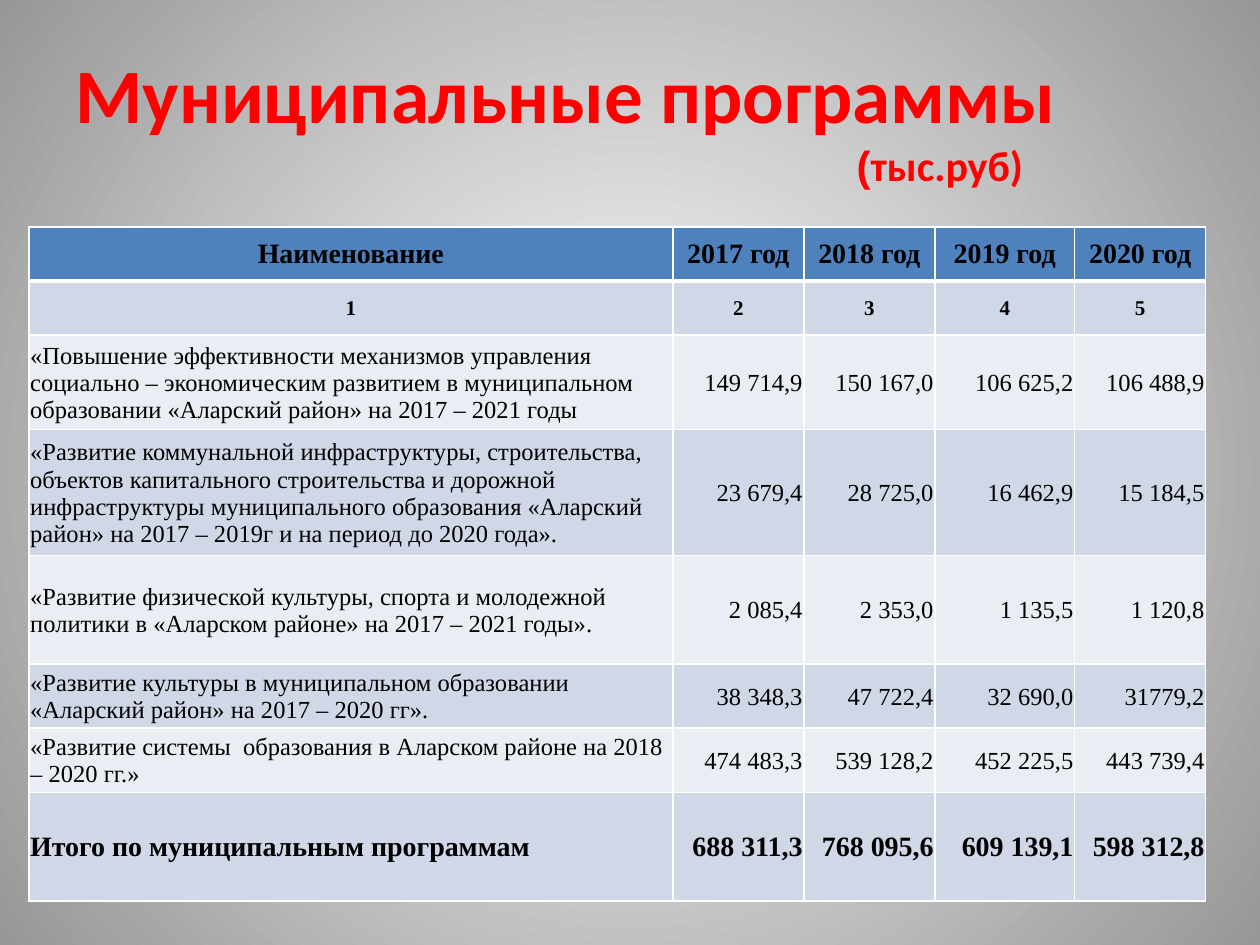
"""Build a slide with a table of municipal programme spending by year."""
from dataclasses import dataclass

from lxml import etree
from pptx import Presentation
from pptx import util as u
from pptx.dml.color import RGBColor
from pptx.enum import text
from pptx.oxml import parse_xml
from pptx.oxml.ns import nsdecls, qn
from pptx.slide import Slide
from pptx.table import _Cell as Cell

WIDTH, HEIGHT = u.Inches(10), u.Inches(7.5)
COLUMNS = (5.11, 1.04, 1.04, 1.11, 1.04)
LEFT, CENTER, RIGHT = text.PP_ALIGN.LEFT, text.PP_ALIGN.CENTER, text.PP_ALIGN.RIGHT


@dataclass(frozen=True)
class Theme:
    title_font: str = "Calibri"
    bracket_font: str = "Arial"
    table_font: str = "Times New Roman"
    title: str = "FF0000"
    ink: str = "000000"
    border: str = "FFFFFF"
    header: str = "4F81BD"
    bands: tuple[str, str] = ("D0D8E8", "E9EDF4")
    backdrop: tuple[str, str] = ("FFFFFF", "979797")
    title_size: int = 44
    unit_size: int = 24
    strong_size: int = 16
    body_size: int = 14
    number_size: int = 12


@dataclass(frozen=True)
class Row:
    height: float
    values: tuple[str, ...]
    size: int
    bold: bool = False
    centered: bool = False


THEME = Theme()
ROWS = (
    Row(0.43, ("Наименование", "2017 год", "2018 год", "2019 год", "2020 год"),
        THEME.strong_size, bold=True, centered=True),
    Row(0.43, ("1", "2", "3", "4", "5"), THEME.number_size, bold=True, centered=True),
    Row(0.75, ("«Повышение эффективности механизмов управления социально – экономическим "
               "развитием в муниципальном образовании «Аларский район» на 2017 – 2021 годы",
               "149 714,9", "150 167,0", "106 625,2", "106 488,9"), THEME.body_size),
    Row(1, ("«Развитие коммунальной инфраструктуры, строительства, объектов капитального "
            "строительства и дорожной инфраструктуры муниципального образования "
            "«Аларский район» на 2017 – 2019г и на период до 2020 года».",
            "23 679,4", "28 725,0", "16 462,9", "15 184,5"), THEME.body_size),
    Row(0.86, ("«Развитие физической культуры, спорта и молодежной политики "
               "в «Аларском районе» на 2017 – 2021 годы».",
               "2 085,4", "2 353,0", "1 135,5", "1 120,8"), THEME.body_size),
    Row(0.51, ("«Развитие культуры в муниципальном образовании «Аларский район» "
               "на 2017 – 2020 гг».",
               "38 348,3", "47 722,4", "32 690,0", "31779,2"), THEME.body_size),
    Row(0.51, ("«Развитие системы  образования в Аларском районе на 2018 – 2020 гг.»",
               "474 483,3", "539 128,2", "452 225,5", "443 739,4"), THEME.body_size),
    Row(0.86, ("Итого по муниципальным программам",
               "688 311,3", "768 095,6", "609 139,1", "598 312,8"),
        THEME.strong_size, bold=True),
)


def style_font(font, name: str, size: int, color: str, bold: bool) -> None:
    """Set the face, size, colour and weight of a font."""
    font.name, font.size, font.bold = name, u.Pt(size), bold
    font.color.rgb = RGBColor.from_string(color)


def paint_background(slide: Slide) -> None:
    """Fill the background with a circular gradient."""
    fill = slide.background.fill
    fill.gradient()
    for stop, color in zip(fill.gradient_stops, THEME.backdrop):
        stop.color.rgb = RGBColor.from_string(color)
    gradient = slide.element.find(".//" + qn("a:gradFill"))
    gradient.remove(gradient.find(qn("a:lin")))
    circle = etree.SubElement(gradient, qn("a:path"), {"path": "circle"})
    etree.SubElement(circle, qn("a:fillToRect"), dict.fromkeys("ltrb", "50000"))


def add_title(slide: Slide) -> None:
    """Add the heading with its unit line below."""
    box = slide.shapes.add_textbox(
        int(WIDTH * 0.05), int(HEIGHT * 0.04), int(WIDTH * 0.9), int(HEIGHT * 0.17))
    frame = box.text_frame
    frame.word_wrap = True
    frame.vertical_anchor = text.MSO_ANCHOR.MIDDLE
    heading, unit = frame.paragraphs[0], frame.add_paragraph()
    heading.text = "Муниципальные программы"
    style_font(heading.font, THEME.title_font, THEME.title_size, THEME.title, True)
    unit.alignment = LEFT
    unit._p.get_or_add_pPr().set("marL", str(int(WIDTH * 0.62)))
    for words, face in (("(", THEME.bracket_font), ("тыс.руб)", THEME.title_font)):
        run = unit.add_run()
        run.text = words
        style_font(run.font, face, THEME.unit_size, THEME.title, True)


def add_borders(cell: Cell, top: int, bottom: int) -> None:
    """Draw the four cell borders, with widths in points."""
    properties = cell._tc.get_or_add_tcPr()
    for side, width in (("L", 1), ("R", 1), ("T", top), ("B", bottom)):
        properties.append(parse_xml(
            f'<a:ln{side} {nsdecls("a")} w="{u.Pt(width)}"><a:solidFill>'
            f'<a:srgbClr val="{THEME.border}"/></a:solidFill></a:ln{side}>'))


def fill_cell(cell: Cell, row: Row, row_index: int, column_index: int) -> None:
    """Write and style one table cell."""
    cell.margin_left = cell.margin_right = cell.margin_top = u.Inches(0.01)
    cell.margin_bottom = 0
    cell.vertical_anchor = text.MSO_ANCHOR.MIDDLE
    add_borders(cell, 3 if row_index == 1 else 1, 3 if row_index == 0 else 1)
    color = THEME.bands[(row_index - 1) % 2] if row_index else THEME.header
    cell.fill.solid()
    cell.fill.fore_color.rgb = RGBColor.from_string(color)
    paragraph = cell.text_frame.paragraphs[0]
    paragraph.text = row.values[column_index]
    paragraph.alignment = CENTER if row.centered else RIGHT if column_index else LEFT
    style_font(paragraph.font, THEME.table_font, row.size, THEME.ink, row.bold)


def add_programme_table(slide: Slide) -> None:
    """Add the programme table on its grid of columns and rows."""
    table = slide.shapes.add_table(
        len(ROWS), len(COLUMNS), int(WIDTH * 0.023), int(HEIGHT * 0.24),
        u.Inches(sum(COLUMNS)), u.Inches(sum(row.height for row in ROWS))).table
    table.horz_banding = False
    for column, width in zip(table.columns, COLUMNS):
        column.width = u.Inches(width)
    for row_index, row in enumerate(ROWS):
        table.rows[row_index].height = u.Inches(row.height)
        for column_index in range(len(COLUMNS)):
            fill_cell(table.cell(row_index, column_index), row, row_index, column_index)


def main() -> None:
    """Build and save the presentation."""
    presentation = Presentation()
    presentation.slide_width, presentation.slide_height = WIDTH, HEIGHT
    slide = presentation.slides.add_slide(presentation.slide_layouts[6])
    paint_background(slide)
    add_title(slide)
    add_programme_table(slide)
    presentation.save("out.pptx")


if __name__ == "__main__":
    main()
